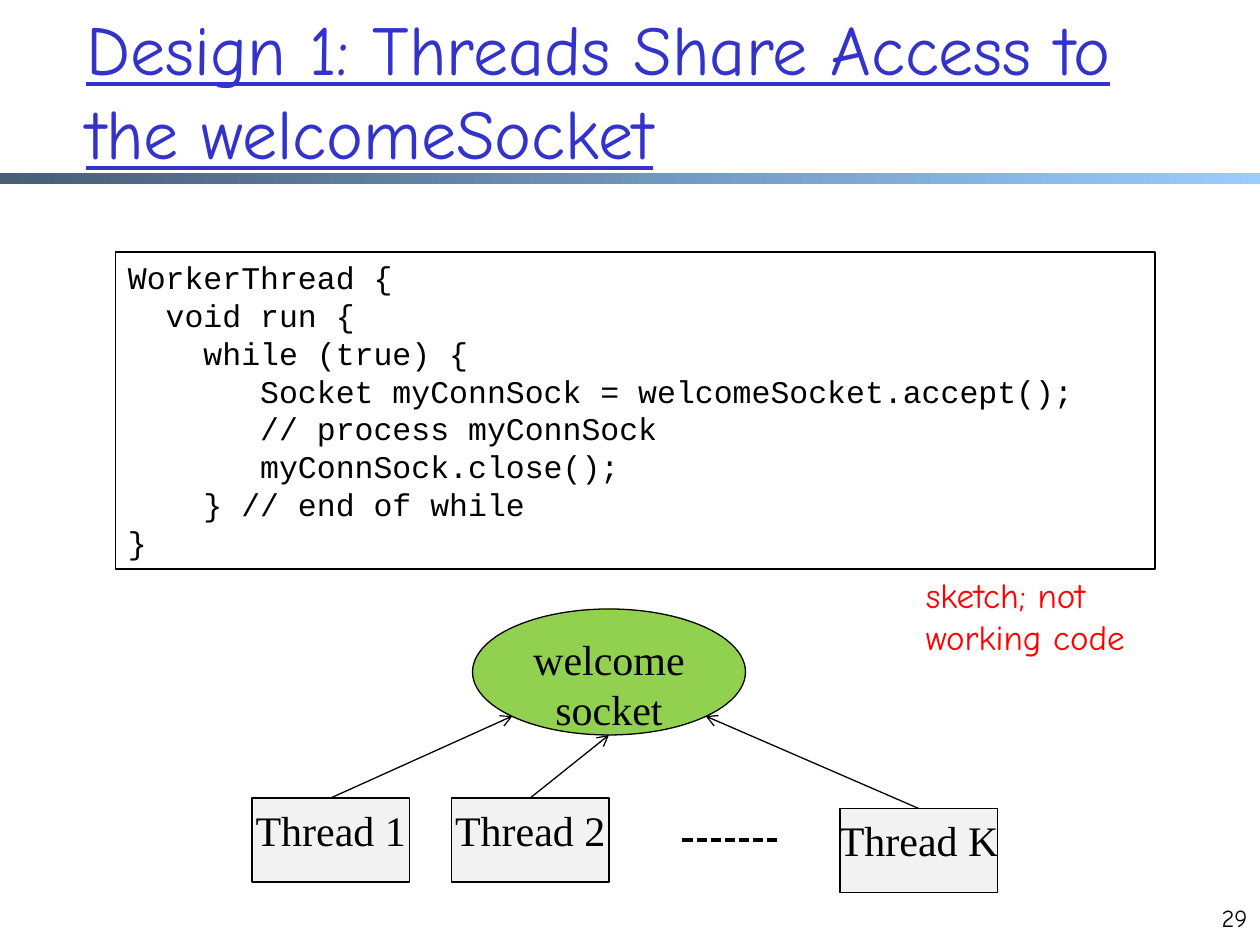
from dataclasses import dataclass

from lxml import etree
from pptx import Presentation
from pptx import util as u
from pptx.dml.color import RGBColor
from pptx.enum import dml, shapes, text
from pptx.oxml.ns import qn

SCALE = 7620  # EMU in one px, 120 px to the inch


@dataclass(frozen=True)
class Theme:
    ink: str = "000000"
    title: str = "3333CC"
    note: str = "FF0000"
    socket: str = "92D050"
    thread: str = "F2F2F2"
    bar: tuple = ("475E76", "99CCFF")
    hand: str = "Comic Neue"
    code: str = "Courier New"
    serif: str = "Times New Roman"
    title_size: int = 40
    label_size: int = 24
    note_size: int = 20
    code_size: int = 18
    number_size: int = 14
    line: float = 0.75
    dash_line: int = 2


THEME = Theme()
LEFT, CENTER, RIGHT = (text.PP_ALIGN.LEFT, text.PP_ALIGN.CENTER,
                       text.PP_ALIGN.RIGHT)
RECTANGLE, OVAL = shapes.MSO_SHAPE.RECTANGLE, shapes.MSO_SHAPE.OVAL

CODE = """WorkerThread {
  void run {
    while (true) { 
       Socket myConnSock = welcomeSocket.accept();
       // process myConnSock
       myConnSock.close();
    } // end of while
}"""


def px(*lengths):
    return [u.Emu(length * SCALE) for length in lengths]


def set_all(target, values):
    for name, value in values.items():
        setattr(target, name, value)


def write(shape, words, font, size, color, align=LEFT, wrap=True,
          anchor=text.MSO_ANCHOR.TOP, grow=False, underline=None):
    frame = shape.text_frame
    fit = text.MSO_AUTO_SIZE
    set_all(frame, {"word_wrap": wrap, "vertical_anchor": anchor,
                    "auto_size": fit.SHAPE_TO_FIT_TEXT if grow else fit.NONE})
    paragraph = frame.paragraphs[0]
    set_all(paragraph, {"text": words, "alignment": align})
    for run in paragraph.runs:
        set_all(run.font, {"name": font, "size": u.Pt(size),
                           "underline": underline})
        run.font.color.rgb = RGBColor.from_string(color)


def add_box(slide, kind, box, fill=None):
    shape = slide.shapes.add_shape(kind, *px(*box))
    shape.shadow.inherit = False
    if fill:
        shape.fill.solid()
        shape.fill.fore_color.rgb = RGBColor.from_string(fill)
    else:
        shape.fill.background()
    shape.line.color.rgb = RGBColor.from_string(THEME.ink)
    shape.line.width = u.Pt(THEME.line)
    return shape


def add_line(slide, start, end, width=THEME.line, arrow=False, dash=None):
    line = slide.shapes.add_connector(shapes.MSO_CONNECTOR.STRAIGHT,
                                      *px(*start, *end))
    line.line.color.rgb = RGBColor.from_string(THEME.ink)
    line.line.width = u.Pt(width)
    if dash:
        line.line.dash_style = dash
    properties = line._element.spPr
    if arrow:
        etree.SubElement(properties.find(qn("a:ln")), qn("a:tailEnd"),
                         type="arrow")
    etree.SubElement(properties, qn("a:effectLst"))


def add_header(slide, box):
    left, top, width, height = box
    # Gradient bar along the bottom edge
    bar = add_box(slide, RECTANGLE, (left, top + height - 10, width, 10))
    bar.line.fill.background()
    bar.fill.gradient()
    bar.fill.gradient_angle = 0
    for stop, color in zip(bar.fill.gradient_stops, THEME.bar):
        stop.color.rgb = RGBColor.from_string(color)
    # Title
    title = slide.shapes.title
    names = ("left", "top", "width", "height")
    set_all(title, dict(zip(names, px(left + 70, top + 10, 1020, 150))))
    write(title, "Design 1: Threads Share Access to the welcomeSocket",
          THEME.hand, THEME.title_size, THEME.title,
          anchor=text.MSO_ANCHOR.MIDDLE, underline=True)


def add_code(slide, box):
    left, top, width, height = box
    # Listing
    listing = add_box(slide, RECTANGLE, box)
    write(listing, CODE, THEME.code, THEME.code_size, THEME.ink, grow=True)
    # Remark under the right-hand corner
    remark = slide.shapes.add_textbox(
        *px(left + width - 230, top + height - 2, 228, 92))
    write(remark, "sketch; not\nworking code", THEME.hand, THEME.note_size,
          THEME.note, wrap=False, grow=True)


def add_diagram(slide, box):
    left, top, width, height = box
    label = {"font": THEME.serif, "size": THEME.label_size,
             "color": THEME.ink, "align": CENTER, "wrap": False}
    # Shared socket
    socket = add_box(slide, OVAL, (left + 210, top, 260, 120), THEME.socket)
    write(socket, "welcome\nsocket", **label)
    center, bottom = left + 340, top + 120
    # Threads, each with an arrow to the rim of the socket
    threads = (("Thread 1", 0, 180, (center - 92, bottom - 18)),
               ("Thread 2", 190, 180, (center, bottom)),
               ("Thread K", 560, 190, (center + 92, bottom - 18)))
    for name, x, y, target in threads:
        thread = add_box(slide, RECTANGLE, (left + x, top + y, 150, 80),
                         THEME.thread)
        write(thread, name, **label)
        add_line(slide, (left + x + 75, top + y), target, arrow=True)
    # Threads left out
    add_line(slide, (left + 410, top + 220), (left + 500, top + 220),
             THEME.dash_line, dash=dml.MSO_LINE.SQUARE_DOT)


def add_number(slide, box):
    number = slide.shapes.add_textbox(*px(*box))
    write(number, "29", THEME.hand, THEME.number_size, THEME.ink, RIGHT)


def main():
    presentation = Presentation()
    set_all(presentation, dict(zip(("slide_width", "slide_height"),
                                   px(1200, 900))))
    slide = presentation.slides.add_slide(presentation.slide_layouts[5])
    add_header(slide, (0, 0, 1200, 175))
    add_code(slide, (110, 240, 990, 302))
    add_diagram(slide, (240, 580, 710, 270))
    add_number(slide, (1140, 854, 60, 60))
    presentation.save("out.pptx")


if __name__ == "__main__":
    main()
